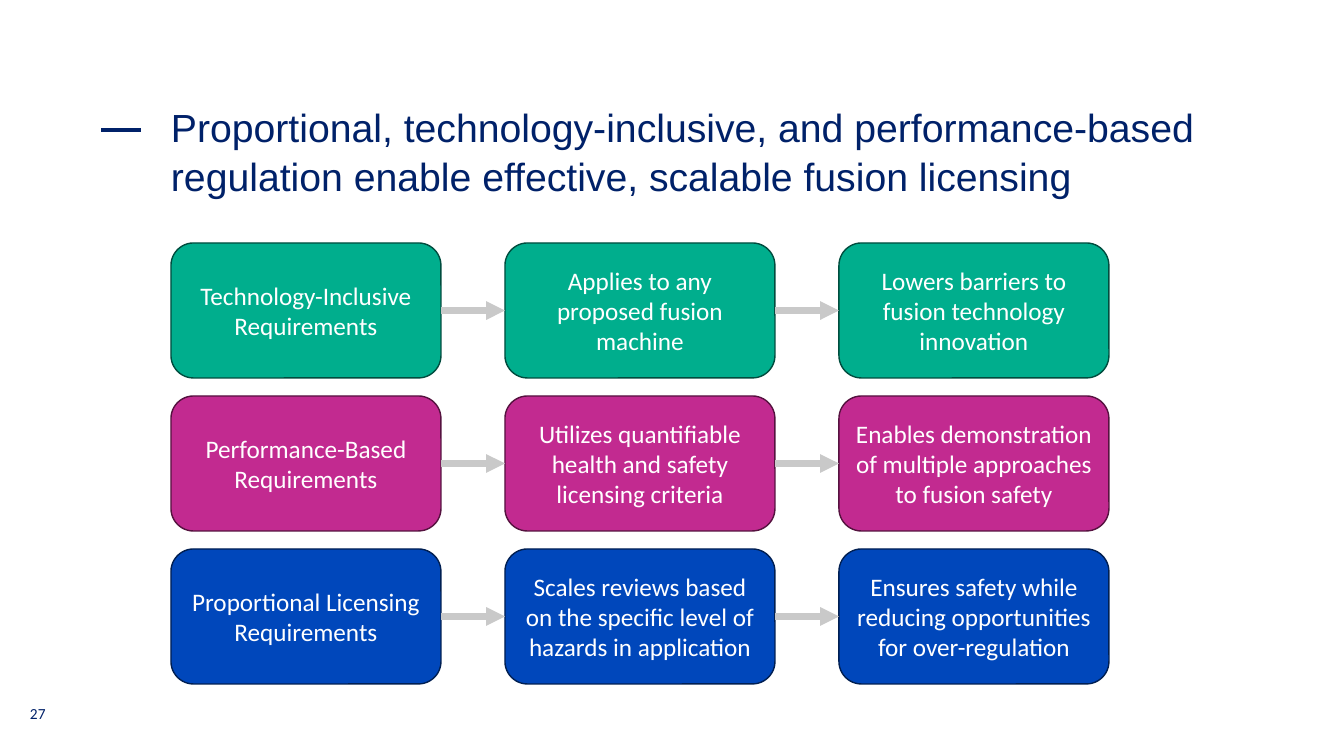
"""Build the slide on fusion licensing: three rows of linked boxes."""
import pptx
import pptx.util
import pptx.dml.color
import pptx.enum.shapes
import pptx.enum.text
import pptx.oxml
import pptx.oxml.ns

PX = 914400 / 100.8
NAVY = "002169"
ALIGN = pptx.enum.text.PP_ALIGN
ANCHOR = pptx.enum.text.MSO_ANCHOR


def color(value):
    return pptx.dml.color.RGBColor.from_string(value)


def write(shape, text, size, font="Calibri", fill=NAVY, align=ALIGN.LEFT,
          anchor=ANCHOR.TOP, margins=(10, 5), spacing=1.0):
    frame = shape.text_frame
    frame.word_wrap = True
    frame.vertical_anchor = anchor
    frame.margin_left = frame.margin_right = round(margins[0] * PX)
    frame.margin_top = frame.margin_bottom = round(margins[1] * PX)
    paragraph = frame.paragraphs[0]
    paragraph.text = text
    paragraph.alignment = align
    paragraph.line_spacing = spacing
    paragraph.font.size = pptx.util.Pt(size)
    paragraph.font.name = font
    paragraph.font.color.rgb = color(fill)


presentation = pptx.Presentation()
presentation.slide_width = round(1344 * PX)
presentation.slide_height = round(756 * PX)
slide = presentation.slides.add_slide(presentation.slide_layouts[6])
shapes = slide.shapes

title = shapes.add_textbox(*[round(n * PX) for n in (171, 101, 1035, 142)])
write(title, "Proportional, technology-inclusive, and performance-based "
      "regulation enable effective, scalable fusion licensing",
      28, font="Arial", margins=(0, 0), spacing=1.05)
number = shapes.add_textbox(*[round(n * PX) for n in (30, 699, 48, 40)])
write(number, "27", 11, margins=(0, 5))

STRAIGHT = pptx.enum.shapes.MSO_CONNECTOR.STRAIGHT
dash = shapes.add_connector(STRAIGHT, *[round(n * PX) for n in (141, 130, 101, 130)])
dash.line.color.rgb = color(NAVY)
dash.line.width = pptx.util.Pt(2.5)
connectors = [dash]

rows = [
    ("00AE8D", "004C3E", ["Technology-Inclusive Requirements",
                          "Applies to any proposed fusion machine",
                          "Lowers barriers to fusion technology innovation"]),
    ("C22A90", "55123F", ["Performance-Based Requirements",
                          "Utilizes quantifiable health and safety licensing criteria",
                          "Enables demonstration of multiple approaches to fusion safety"]),
    ("0047BB", "001F52", ["Proportional Licensing Requirements",
                          "Scales reviews based on the specific level of hazards in application",
                          "Ensures safety while reducing opportunities for over-regulation"]),
]

for row, (fill, outline, texts) in enumerate(rows):
    previous = None
    for column, text in enumerate(texts):
        place = (171 + 334 * column, 243 + 153 * row, 270, 135)
        box = shapes.add_shape(pptx.enum.shapes.MSO_SHAPE.ROUNDED_RECTANGLE,
                               *[round(n * PX) for n in place])
        box.shadow.inherit = False
        box.fill.solid()
        box.fill.fore_color.rgb = color(fill)
        box.line.color.rgb = color(outline)
        box.line.width = pptx.util.Pt(1)
        write(box, text, 18, fill="FFFFFF", align=ALIGN.CENTER, anchor=ANCHOR.MIDDLE)
        if previous is not None:
            arrow = shapes.add_connector(STRAIGHT, 0, 0, 0, 0)
            arrow.begin_connect(previous, 3)
            arrow.end_connect(box, 1)
            arrow.line.color.rgb = color("C9C9C9")
            arrow.line.width = pptx.util.Pt(4.5)
            head = pptx.oxml.parse_xml(
                f'<a:tailEnd {pptx.oxml.ns.nsdecls("a")} type="triangle"/>')
            arrow.line._get_or_add_ln().append(head)
            connectors.append(arrow)
        previous = box

for connector in connectors:
    connector._element.spPr.append(
        pptx.oxml.parse_xml(f'<a:effectLst {pptx.oxml.ns.nsdecls("a")}/>'))

presentation.save("out.pptx")
